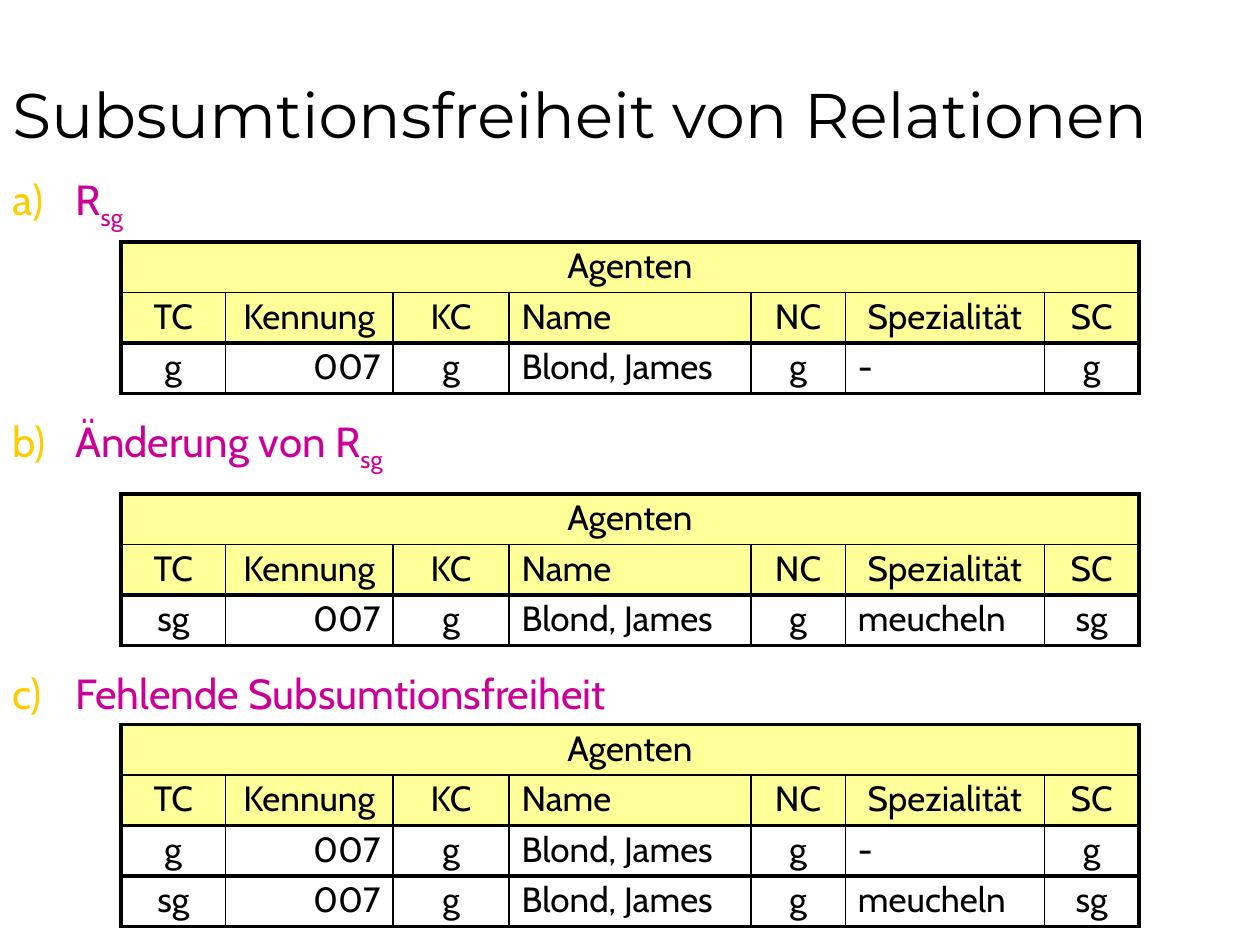
from dataclasses import dataclass

from lxml import etree
from pptx import Presentation
from pptx.dml.color import RGBColor
from pptx.enum.text import MSO_ANCHOR, PP_ALIGN
from pptx.oxml.ns import qn
from pptx.util import Inches, Pt

LEFT, CENTER, RIGHT = PP_ALIGN.LEFT, PP_ALIGN.CENTER, PP_ALIGN.RIGHT
BOTTOM = MSO_ANCHOR.BOTTOM


@dataclass(frozen=True)
class Theme:
    title_font: str = "Montserrat"
    body_font: str = "Cabin"
    title_size: int = 36
    heading_size: int = 24
    cell_size: int = 20
    text: str = "000000"
    heading: str = "CC0099"
    number: str = "FFCC00"
    header_fill: str = "FFFF99"
    thin: float = 1
    thick: float = 2.25


THEME = Theme()
SLIDE_WIDTH, SLIDE_HEIGHT = 10, 7.5
TABLE_LEFT, ROW_HEIGHT = 0.96, 0.4
HEADING_HEIGHT, HEADING_INDENT = 0.5, 0.5

# Column label, width, header alignment, data alignment
COLUMNS = [
    ("TC", 0.83, CENTER, CENTER),
    ("Kennung", 1.33, CENTER, RIGHT),
    ("KC", 0.92, CENTER, CENTER),
    ("Name", 1.92, LEFT, LEFT),
    ("NC", 0.75, CENTER, CENTER),
    ("Spezialität", 1.58, CENTER, LEFT),
    ("SC", 0.75, CENTER, CENTER),
]
BASE_AGENT = ["g", "007", "g", "Blond, James", "g", "-", "g"]
CHANGED_AGENT = ["sg", "007", "g", "Blond, James", "g", "meucheln", "sg"]

# Heading top, heading, subscript, table top, agents
SECTIONS = [
    (1.33, "R", "sg", 1.92, [BASE_AGENT]),
    (3.25, "Änderung von R", "sg", 3.92, [CHANGED_AGENT]),
    (5.25, "Fehlende Subsumtionsfreiheit", "", 5.75, [BASE_AGENT, CHANGED_AGENT]),
]


def add_run(paragraph, text, font, size, color):
    run = paragraph.add_run()
    run.text = text
    run.font.name = font
    run.font.size = Pt(size)
    run.font.color.rgb = RGBColor.from_string(color)
    return run


def add_color(parent, color):
    fill = etree.SubElement(parent, qn("a:solidFill"))
    etree.SubElement(fill, qn("a:srgbClr"), val=color)


def add_full_width_text(slide, top, height):
    box = slide.shapes.add_textbox(0, Inches(top), Inches(SLIDE_WIDTH), Inches(height))
    box.text_frame.word_wrap = True
    return box.text_frame


def add_title(slide, title):
    frame = add_full_width_text(slide, 0, SLIDE_HEIGHT / 6)
    frame.vertical_anchor = BOTTOM
    add_run(frame.paragraphs[0], title, THEME.title_font, THEME.title_size, THEME.text)


def number_paragraph(paragraph, number):
    """Give the paragraph a hanging letter: a), b), c)."""
    properties = paragraph._p.get_or_add_pPr()
    indent = Inches(HEADING_INDENT)
    properties.set("marL", str(indent))
    properties.set("indent", str(-indent))
    bullet_color = etree.SubElement(properties, qn("a:buClr"))
    etree.SubElement(bullet_color, qn("a:srgbClr"), val=THEME.number)
    etree.SubElement(properties, qn("a:buFont"), typeface=THEME.body_font)
    etree.SubElement(properties, qn("a:buAutoNum"),
                     type="alphaLcParenR", startAt=str(number))


def add_heading(slide, top, number, heading, subscript):
    paragraph = add_full_width_text(slide, top, HEADING_HEIGHT).paragraphs[0]
    number_paragraph(paragraph, number)
    style = (THEME.body_font, THEME.heading_size, THEME.heading)
    add_run(paragraph, heading, *style)
    if subscript:
        lowered = add_run(paragraph, subscript, *style)
        lowered._r.get_or_add_rPr().set("baseline", "-25000")


def set_borders(cell, row, column):
    """Thick outline and rules below the column labels, thin lines elsewhere."""
    is_thick = {
        "a:lnL": row == 0 or column == 0,
        "a:lnR": row == 0 or column == len(COLUMNS) - 1,
        "a:lnT": row != 1,
        "a:lnB": row != 0,
    }
    properties = cell._tc.get_or_add_tcPr()
    for side, thick in is_thick.items():
        width = Pt(THEME.thick if thick else THEME.thin)
        add_color(etree.SubElement(properties, qn(side), w=str(width)), THEME.text)


def fill_cell(cell, text, alignment):
    paragraph = cell.text_frame.paragraphs[0]
    paragraph.alignment = alignment
    paragraph.line_spacing = 0.9
    add_run(paragraph, text, THEME.body_font, THEME.cell_size, THEME.text)


def add_relation(slide, top, name, agents):
    labels, widths, label_alignments, data_alignments = zip(*COLUMNS)
    rows = [labels, *agents]
    row_count = len(rows) + 1
    table = slide.shapes.add_table(
        row_count, len(COLUMNS), Inches(TABLE_LEFT), Inches(top),
        Inches(sum(widths)), Inches(ROW_HEIGHT * row_count)).table
    table.first_row = table.horz_banding = False
    for column, width in zip(table.columns, widths):
        column.width = Inches(width)
    for r, row in enumerate(table.rows):
        row.height = Inches(ROW_HEIGHT)
        for c, cell in enumerate(row.cells):
            set_borders(cell, r, c)
            if r < 2:
                cell.fill.solid()
                cell.fill.fore_color.rgb = RGBColor.from_string(THEME.header_fill)
            else:
                cell.fill.background()
            if r > 0:
                alignments = label_alignments if r == 1 else data_alignments
                fill_cell(cell, rows[r - 1][c], alignments[c])
    name_cell = table.cell(0, 0)
    name_cell.merge(table.cell(0, len(COLUMNS) - 1))
    fill_cell(name_cell, name, CENTER)


def main():
    presentation = Presentation()
    presentation.slide_width = Inches(SLIDE_WIDTH)
    presentation.slide_height = Inches(SLIDE_HEIGHT)
    slide = presentation.slides.add_slide(presentation.slide_layouts[6])
    add_title(slide, "Subsumtionsfreiheit von Relationen")
    for number, section in enumerate(SECTIONS, start=1):
        heading_top, heading, subscript, table_top, agents = section
        add_heading(slide, heading_top, number, heading, subscript)
        add_relation(slide, table_top, "Agenten", agents)
    presentation.save("out.pptx")


if __name__ == "__main__":
    main()
